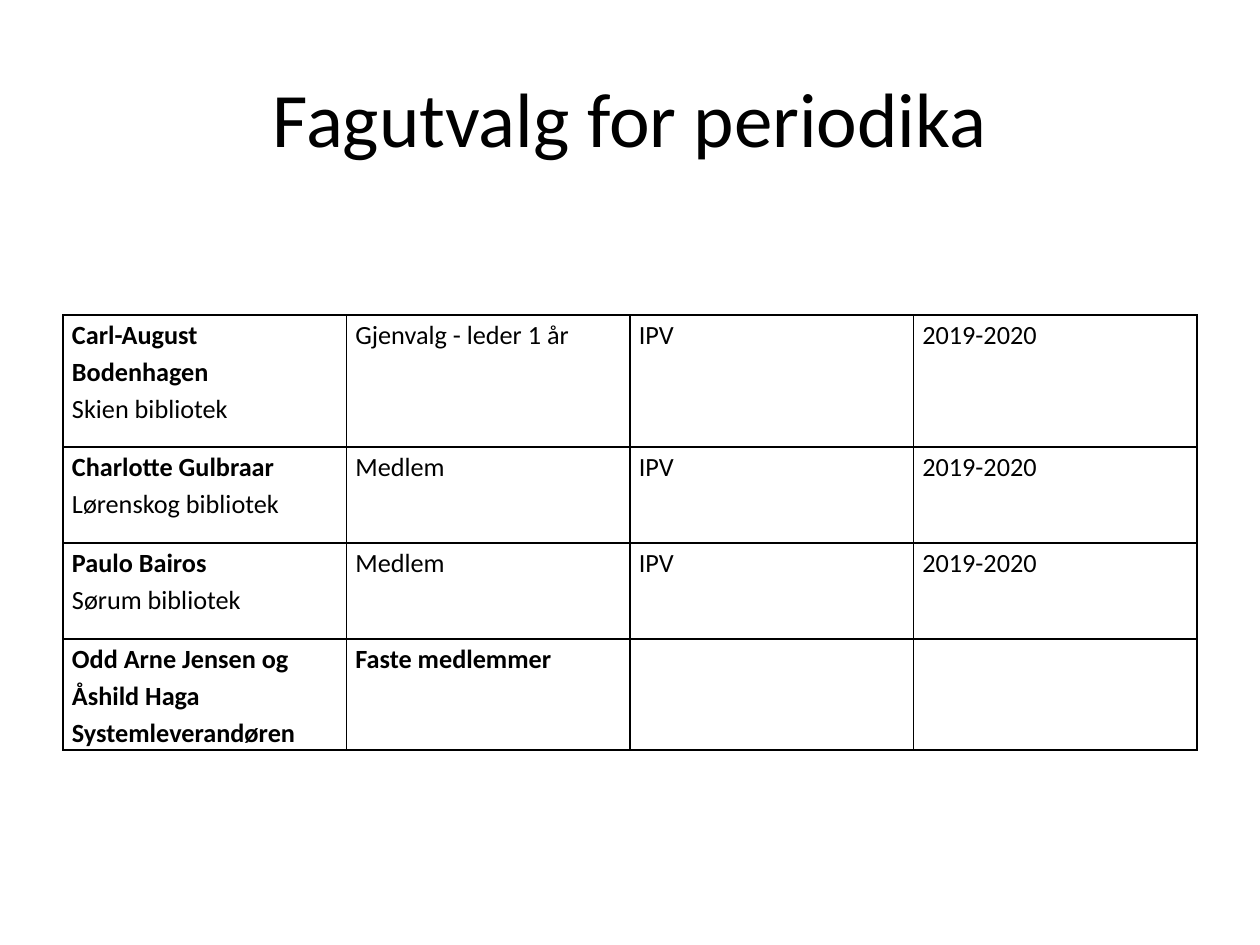
from lxml import etree
from pptx import Presentation
from pptx.dml.color import RGBColor
from pptx.enum.text import MSO_ANCHOR, PP_ALIGN
from pptx.oxml.ns import qn
from pptx.util import Pt

PX = 914400 // 126
BLACK = RGBColor(0x00, 0x00, 0x00)
FONT = "Calibri"
CENTER, LEFT = PP_ALIGN.CENTER, PP_ALIGN.LEFT
MIDDLE = MSO_ANCHOR.MIDDLE
BORDER_SIDES = ("a:lnL", "a:lnR", "a:lnT", "a:lnB")
CELL_INSET = 9

MEMBERS = [
    (132, [("Carl-August Bodenhagen", "Skien bibliotek"),
           ("Gjenvalg - leder 1 år",), ("IPV",), ("2019-2020",)], (1, 0, 0, 0)),
    (96, [("Charlotte Gulbraar", "Lørenskog bibliotek"),
          ("Medlem",), ("IPV",), ("2019-2020",)], (1, 0, 0, 0)),
    (96, [("Paulo Bairos", "Sørum bibliotek"),
          ("Medlem",), ("IPV",), ("2019-2020",)], (1, 0, 0, 0)),
    (111, [("Odd Arne Jensen og", "Åshild Haga", "Systemleverandøren"),
           ("Faste medlemmer",), (), ()], (3, 1, 0, 0)),
]


def px(length):
    return round(length * PX)


def write_text(frame, lines, size, bold_lines=0, align=LEFT, spacing=1.0):
    frame.word_wrap = True
    paragraph = frame.paragraphs[0]
    paragraph.alignment = align
    paragraph.line_spacing = spacing
    paragraph.font.size = Pt(size)
    for index, line in enumerate(lines):
        if index:
            paragraph.add_line_break()
        run = paragraph.add_run()
        run.text = line
        run.font.name = FONT
        run.font.size = Pt(size)
        run.font.bold = index < bold_lines
        run.font.color.rgb = BLACK


def outline_cell(cell):
    properties = cell._tc.get_or_add_tcPr()
    for position, side in enumerate(BORDER_SIDES):
        border = etree.Element(qn(side), w=str(Pt(1)))
        fill = etree.SubElement(border, qn("a:solidFill"))
        etree.SubElement(fill, qn("a:srgbClr"), val=str(BLACK))
        properties.insert(position, border)


def add_title(slide, left, top, width, height):
    title = slide.shapes.add_textbox(px(left), px(top), px(width), px(height))
    title.text_frame.vertical_anchor = MIDDLE
    write_text(title.text_frame, ["Fagutvalg for periodika"], 44, align=CENTER)


def add_member_table(slide, left, top, width):
    column_count = len(MEMBERS[0][1])
    height = sum(row_height for row_height, _, _ in MEMBERS)
    members = slide.shapes.add_table(
        len(MEMBERS), column_count, px(left), px(top), px(width), px(height)).table
    members.first_row = False
    members.horz_banding = False
    for column in members.columns:
        column.width = px(width / column_count)
    for row, (row_height, entries, bold_counts) in zip(members.rows, MEMBERS):
        row.height = px(row_height)
        for cell, lines, bold_lines in zip(row.cells, entries, bold_counts):
            cell.margin_left = cell.margin_right = px(CELL_INSET)
            cell.margin_top = cell.margin_bottom = 0
            cell.fill.background()
            outline_cell(cell)
            write_text(cell.text_frame, lines, 15, bold_lines, spacing=1.15)


def main():
    presentation = Presentation()
    presentation.slide_width = px(1260)
    presentation.slide_height = px(945)
    slide = presentation.slides.add_slide(presentation.slide_layouts[6])
    add_title(slide, 63, 38, 1134, 157)
    add_member_table(slide, 63, 315, 1134)
    presentation.save("out.pptx")


if __name__ == "__main__":
    main()
